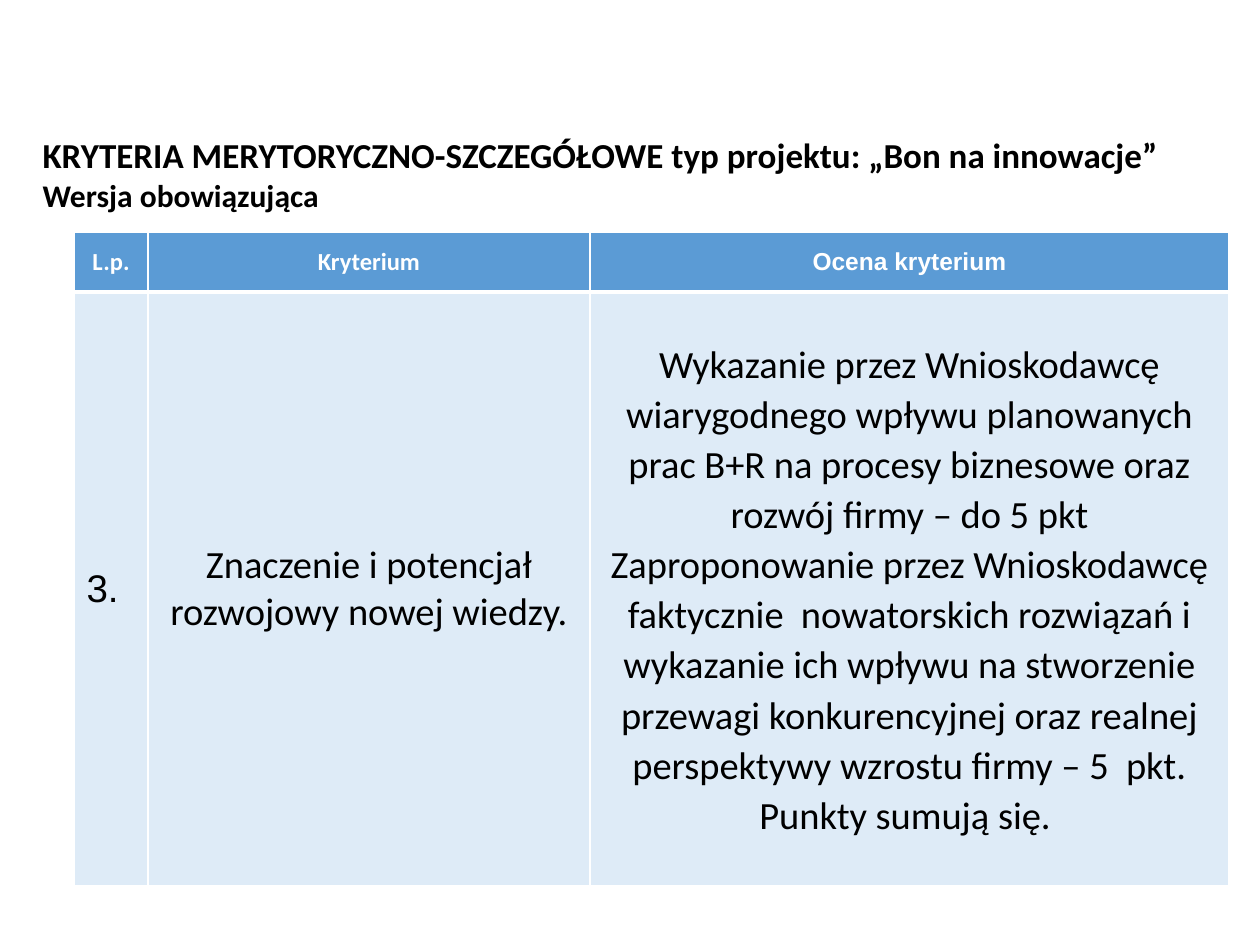
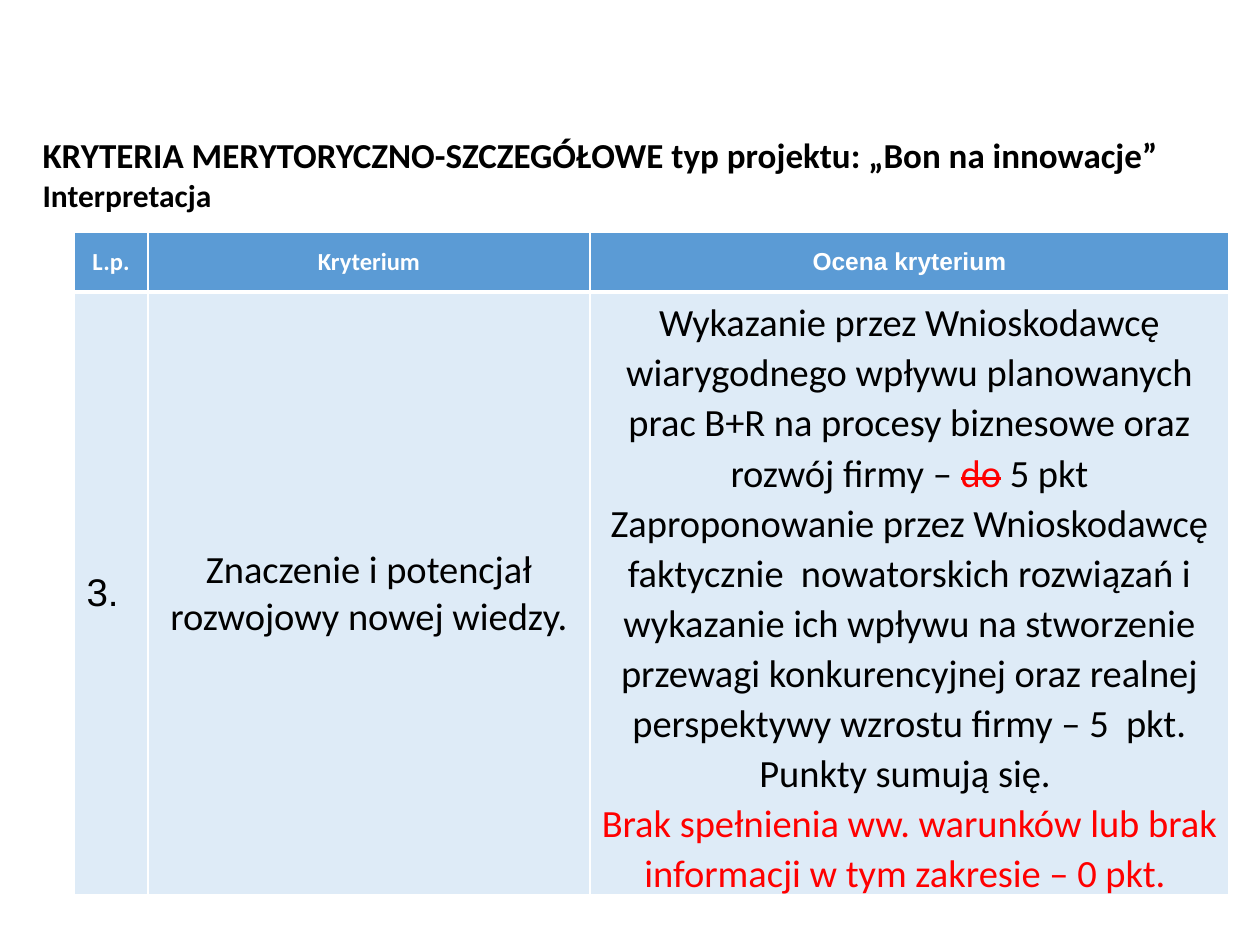
from lxml import etree
from pptx import Presentation
from pptx.dml.color import RGBColor
from pptx.enum.text import MSO_ANCHOR, MSO_AUTO_SIZE, PP_ALIGN
from pptx.oxml.ns import qn
from pptx.util import Emu, Pt

MIDDLE = MSO_ANCHOR.MIDDLE
FIT_SHAPE = MSO_AUTO_SIZE.SHAPE_TO_FIT_TEXT
LEFT, CENTER = PP_ALIGN.LEFT, PP_ALIGN.CENTER

WHITE = RGBColor(0xFF, 0xFF, 0xFF)
BLACK = RGBColor(0x00, 0x00, 0x00)
RED = RGBColor(0xFF, 0x00, 0x00)
HEADER_BLUE = RGBColor(0x5B, 0x9B, 0xD5)
BODY_BLUE = RGBColor(0xDE, 0xEB, 0xF7)
SANS, ARIAL = "Calibri", "Arial"

PX_PER_INCH = 126
SLIDE_SIZE = (1260, 945)
HEADING_BOX = (30, 127, 1230, 93)
TABLE_BOX = (74, 232, 1155, 654)
COLUMN_WIDTHS = (74, 442, 639)
HEADER_HEIGHT = 60
TIGHT_MARGIN = 5
SCORE_SPACING = 1.07

PROJECT_HEADING = "KRYTERIA MERYTORYCZNO-SZCZEGÓŁOWE typ projektu: „Bon na innowacje”"
COLUMN_HEADINGS = (("L.p.", SANS), ("Kryterium", SANS), ("Ocena kryterium", ARIAL))
CRITERION = "Znaczenie i potencjał rozwojowy nowej wiedzy."
IMPACT = ("Wykazanie przez Wnioskodawcę wiarygodnego wpływu planowanych prac B+R "
          "na procesy biznesowe oraz rozwój firmy – ")
NOVELTY = ("Zaproponowanie przez Wnioskodawcę faktycznie  nowatorskich rozwiązań "
           "i wykazanie ich wpływu na stworzenie przewagi konkurencyjnej oraz "
           "realnej perspektywy wzrostu firmy – 5  pkt.")
SUM_RULE = "Punkty sumują się. "
ZERO_RULE = "Brak spełnienia ww. warunków lub brak informacji w tym zakresie – 0 pkt. "

# Each score is a list of paragraphs; each paragraph lists (text, colour, struck out)
SHARED_SCORE = [[(NOVELTY, BLACK, False)], [(SUM_RULE, BLACK, False)]]
VERSIONS = (
    ("Wersja obowiązująca",
     [[(IMPACT + "do 5 pkt", BLACK, False)], *SHARED_SCORE]),
    ("Interpretacja",
     [[(IMPACT, BLACK, False), ("do", RED, True), (" 5 pkt", BLACK, False)],
      *SHARED_SCORE,
      [(ZERO_RULE, RED, False)]]),
)


def px(length):
    return Emu(round(length * 914400 / PX_PER_INCH))


def add_run(paragraph, text, size, font=SANS, color=BLACK, bold=False, struck=False):
    run = paragraph.add_run()
    run.text = text
    run.font.size = Pt(size)
    run.font.name = font
    run.font.bold = bold
    run.font.color.rgb = color
    if struck:
        run.font._element.set("strike", "sngStrike")


def next_paragraph(frame, index):
    return frame.add_paragraph() if index else frame.paragraphs[0]


def set_borders(cell, **widths):
    properties = cell._tc.get_or_add_tcPr()
    for side in "LRTB":
        line = etree.SubElement(properties, qn(f"a:ln{side}"),
                                w=str(Pt(widths.get(side, 1))))
        fill = etree.SubElement(line, qn("a:solidFill"))
        etree.SubElement(fill, qn("a:srgbClr"), val=str(WHITE))


def style_cell(cell, color, **border_widths):
    set_borders(cell, **border_widths)
    cell.fill.solid()
    cell.fill.fore_color.rgb = color
    cell.vertical_anchor = MIDDLE


def add_heading(slide, box, version):
    title = slide.shapes.title
    title.left, title.top, title.width, title.height = map(px, box)
    frame = title.text_frame
    frame.word_wrap = True
    frame.auto_size = FIT_SHAPE
    frame.vertical_anchor = MIDDLE
    for index, (text, size) in enumerate(((PROJECT_HEADING, 20), (version, 18))):
        paragraph = next_paragraph(frame, index)
        paragraph.alignment = LEFT
        add_run(paragraph, text, size, bold=True)


def fill_score(cell, score):
    cell.margin_left = cell.margin_right = px(TIGHT_MARGIN)
    cell.margin_top = cell.margin_bottom = px(TIGHT_MARGIN)
    for index, parts in enumerate(score):
        paragraph = next_paragraph(cell.text_frame, index)
        paragraph.alignment = CENTER
        paragraph.line_spacing = SCORE_SPACING
        for text, color, struck in parts:
            add_run(paragraph, text, 22, color=color, struck=struck)


def add_criteria_table(slide, box, score):
    table = slide.shapes.add_table(2, len(COLUMN_WIDTHS), *map(px, box)).table
    table.horz_banding = False
    for column, width in zip(table.columns, COLUMN_WIDTHS):
        column.width = px(width)
    table.rows[0].height = px(HEADER_HEIGHT)
    table.rows[1].height = px(box[3] - HEADER_HEIGHT)

    # Header row, with a thick rule below it
    for cell, (heading, font) in zip(table.rows[0].cells, COLUMN_HEADINGS):
        style_cell(cell, HEADER_BLUE, B=3)
        paragraph = cell.text_frame.paragraphs[0]
        paragraph.alignment = CENTER
        add_run(paragraph, heading, 14, font, WHITE, bold=True)

    # Criterion row
    number, criterion, assessment = table.rows[1].cells
    for cell in (number, criterion, assessment):
        style_cell(cell, BODY_BLUE, T=3)
    add_run(number.text_frame.paragraphs[0], "3.", 22, ARIAL)
    paragraph = criterion.text_frame.paragraphs[0]
    paragraph.alignment = CENTER
    add_run(paragraph, CRITERION, 22)
    fill_score(assessment, score)


def add_criterion_slide(deck, version, score):
    slide = deck.slides.add_slide(deck.slide_layouts.get_by_name("Title Only"))
    add_criteria_table(slide, TABLE_BOX, score)
    add_heading(slide, HEADING_BOX, version)


def main():
    deck = Presentation()
    deck.slide_width, deck.slide_height = map(px, SLIDE_SIZE)
    for version, score in VERSIONS:
        add_criterion_slide(deck, version, score)
    deck.save("out.pptx")


if __name__ == "__main__":
    main()
